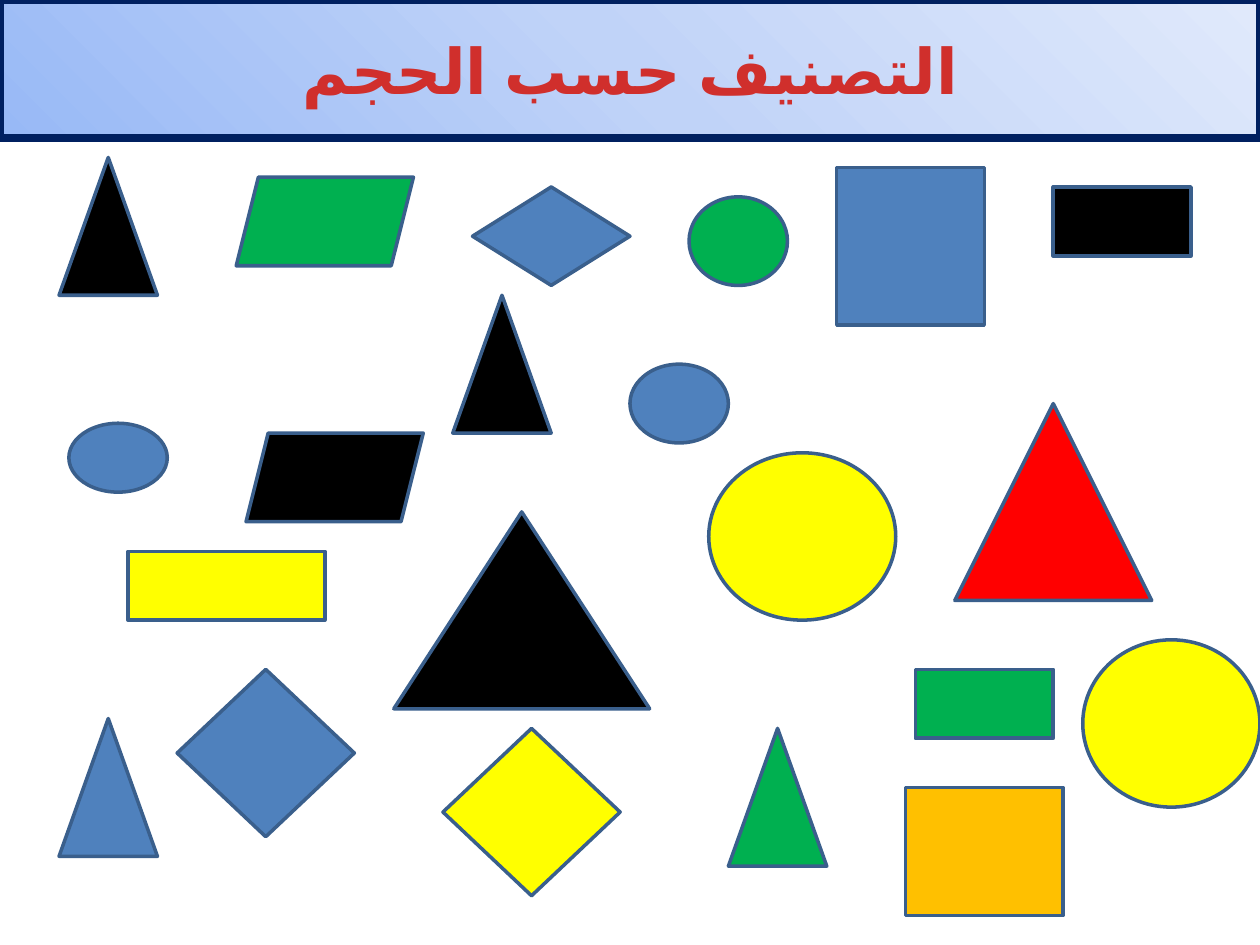
import lxml.etree
import pptx
import pptx.dml.color
import pptx.enum.lang
import pptx.enum.shapes
import pptx.enum.text
import pptx.oxml.ns
import pptx.util

Pt = pptx.util.Pt
RGB = pptx.dml.color.RGBColor
KIND = pptx.enum.shapes.MSO_SHAPE
qn = pptx.oxml.ns.qn

NAVY = RGB(0x00, 0x20, 0x60)
EDGE = RGB(0x3A, 0x5F, 0x8C)
BLACK = RGB(0x00, 0x00, 0x00)
BLUE = RGB(0x4F, 0x81, 0xBD)
GREEN = RGB(0x00, 0xB0, 0x50)
YELLOW = RGB(0xFF, 0xFF, 0x00)
RED = RGB(0xFF, 0x00, 0x00)
ORANGE = RGB(0xFF, 0xC0, 0x00)
SKY = [(0, RGB(0x98, 0xB9, 0xF6)), (50, RGB(0xC0, 0xD3, 0xF8)),
       (100, RGB(0xE0, 0xE9, 0xFB))]
ROSE = [(0, RGB(0xFC, 0x7C, 0x7A)), (75, RGB(0xD0, 0x2F, 0x2C)),
        (100, RGB(0xC7, 0x05, 0x00))]

WIDE, HIGH = 720, 540
UNIT = WIDE / 128  # the slide is 128 grid units wide


def add_shape(kind, left, top, width, height, edge, weight):
    """Add an outlined shape, placed in grid units."""
    shape = slide.shapes.add_shape(
        kind, *[Pt(UNIT * n) for n in (left, top, width, height)])
    shape.shadow.inherit = False
    shape.line.color.rgb = edge
    shape.line.width = Pt(weight)
    return shape


def set_blend(fill, parent, stops, angle):
    """Give a fill a linear gradient; parent is the element that holds it."""
    fill.gradient()
    fill.gradient_angle = angle
    group = parent.find(qn("a:gradFill")).find(qn("a:gsLst"))
    for old in list(group):
        group.remove(old)
    for place, color in stops:
        stop = lxml.etree.SubElement(group, qn("a:gs"), pos=str(place * 1000))
        lxml.etree.SubElement(stop, qn("a:srgbClr"), val=str(color))


deck = pptx.Presentation()
deck.slide_width, deck.slide_height = Pt(WIDE), Pt(HIGH)
slide = deck.slides.add_slide(deck.slide_layouts[6])

# Title banner
banner = add_shape(KIND.RECTANGLE, 0, 0, 128, 14, NAVY, 4.5)
set_blend(banner.fill, banner._element.spPr, SKY, 45)
frame = banner.text_frame
frame.text = "التصنيف حسب الحجم"
frame.vertical_anchor = pptx.enum.text.MSO_ANCHOR.MIDDLE
line = frame.paragraphs[0]
line.alignment = pptx.enum.text.PP_ALIGN.CENTER
line._p.get_or_add_pPr().set("rtl", "1")
run = line.runs[0]
run.font.size = Pt(36)
run.font.bold = True
run.font.name = "Calibri"
run.font.language_id = pptx.enum.lang.MSO_LANGUAGE_ID.ARABIC
set_blend(run.font.fill, run._r.get_or_add_rPr(), ROSE, 270)

# Shapes to sort: left, top, width, height in grid units, then colour
groups = {
    KIND.RECTANGLE: [
        (107, 19, 14, 7, BLACK),
        (85, 17, 15, 16, BLUE),
        (92, 80, 16, 13, ORANGE),
        (13, 56, 20, 7, YELLOW),
        (93, 68, 14, 7, GREEN),
    ],
    KIND.ISOSCELES_TRIANGLE: [
        (40, 52, 26, 20, BLACK),
        (97, 41, 20, 20, RED),
        (46, 30, 10, 14, BLACK),
        (6, 16, 10, 14, BLACK),
        (74, 74, 10, 14, GREEN),
        (6, 73, 10, 14, BLUE),
    ],
    KIND.FLOWCHART_CONNECTOR: [
        (64, 37, 10, 8, BLUE),
        (70, 20, 10, 9, GREEN),
        (7, 43, 10, 7, BLUE),
        (110, 65, 18, 17, YELLOW),
        (72, 46, 19, 17, YELLOW),
    ],
    KIND.FLOWCHART_DECISION: [
        (18, 68, 18, 17, BLUE),
        (45, 74, 18, 17, YELLOW),
        (48, 19, 16, 10, BLUE),
    ],
    KIND.PARALLELOGRAM: [
        (24, 18, 18, 9, GREEN),
        (25, 44, 18, 9, BLACK),
    ],
}
for kind, items in groups.items():
    for *box, color in items:
        shape = add_shape(kind, *box, EDGE, 2)
        shape.fill.solid()
        shape.fill.fore_color.rgb = color

deck.save("out.pptx")
